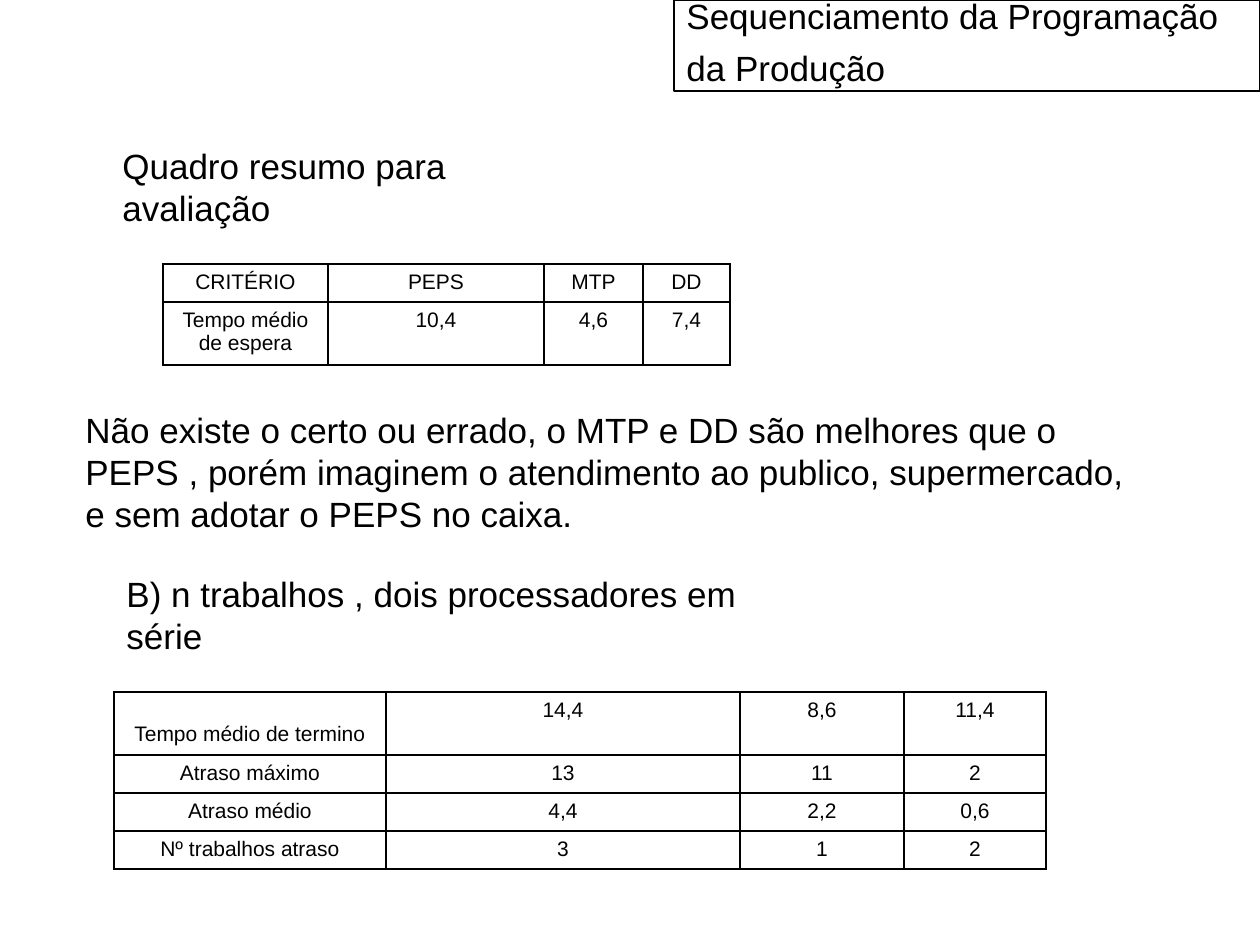
from lxml.etree import SubElement
from pptx import Presentation
from pptx.dml.color import RGBColor
from pptx.enum.shapes import MSO_SHAPE as SHAPE
from pptx.enum.text import MSO_ANCHOR as ANCHOR, PP_ALIGN as ALIGN
from pptx.oxml.ns import qn
from pptx.util import Pt

BLACK = RGBColor(0, 0, 0)
WHITE = RGBColor(255, 255, 255)
FONT = "Arial"

# Content: boxes are (left, top, width, height) in px
TITLE = "Sequenciamento da Programação da Produção"
TITLE_BOX = (674, 0, 586, 91)
TEXTS = [
    ("Quadro resumo para avaliação", (110, 138, 490, 97)),
    ("Não existe o certo ou errado, o MTP e DD são melhores que o PEPS , "
     "porém imaginem o atendimento ao publico, supermercado, "
     "e sem adotar o PEPS no caixa.", (73, 402, 1072, 139)),
    ("B) n trabalhos , dois processadores em série", (114, 572, 639, 84)),
]
WAITING = {
    "at": (163, 264),
    "cols": [165, 216, 99, 87],
    "heights": [38, 63],
    "rows": [("CRITÉRIO", "PEPS", "MTP", "DD"),
             ("Tempo médio de espera", "10,4", "4,6", "7,4")],
}
DELAYS = {
    "at": (114, 692),
    "cols": [272, 354, 164, 142],
    "heights": [63, 38, 38, 38],
    "rows": [("Tempo médio de termino", "14,4", "8,6", "11,4"),
             ("Atraso máximo", "13", "11", "2"),
             ("Atraso médio", "4,4", "2,2", "0,6"),
             ("Nº trabalhos atraso", "3", "1", "2")],
}


def px(n):
    return round(n * 914400 / 126)


def write(tf, text, size, align=ALIGN.LEFT):
    tf.word_wrap = True
    tf.text = text
    p = tf.paragraphs[0]
    p.alignment = align
    font = p.runs[0].font
    font.name, font.size = FONT, Pt(size)
    font.color.rgb = BLACK
    return p


def add_borders(cell):
    tcPr = cell._tc.get_or_add_tcPr()
    for i, side in enumerate(("lnL", "lnR", "lnT", "lnB")):
        ln = SubElement(tcPr, qn(f"a:{side}"), w=str(Pt(1)))
        fill = SubElement(ln, qn("a:solidFill"))
        SubElement(fill, qn("a:srgbClr"), val=str(BLACK))
        # Borders come before the fill in the cell properties
        tcPr.insert(i, ln)


def add_table(slide, data):
    rows, cols, heights = data["rows"], data["cols"], data["heights"]
    x, y = data["at"]
    table = slide.shapes.add_table(len(rows), len(cols), px(x), px(y),
                                   px(sum(cols)), px(sum(heights))).table
    table.first_row = table.horz_banding = False
    for col, width in zip(table.columns, cols):
        col.width = px(width)
    for row, height, texts in zip(table.rows, heights, rows):
        row.height = px(height)
        for cell, text in zip(row.cells, texts):
            write(cell.text_frame, text, 12, ALIGN.CENTER)
            cell.fill.background()
            add_borders(cell)
    return table


prs = Presentation()
prs.slide_width, prs.slide_height = px(1260), px(945)
slide = prs.slides.add_slide(prs.slide_layouts[6])

# Title box
sp = slide.shapes.add_shape(SHAPE.RECTANGLE, *map(px, TITLE_BOX))
sp.shadow.inherit = False
sp.fill.solid()
sp.fill.fore_color.rgb = WHITE
sp.line.color.rgb = BLACK
sp.line.width = Pt(0.75)
tf = sp.text_frame
tf.vertical_anchor = ANCHOR.MIDDLE
tf.margin_top, tf.margin_bottom = 0, px(18)
write(tf, TITLE, 20).line_spacing = Pt(30)

# Running text
for text, box in TEXTS:
    tf = slide.shapes.add_textbox(*map(px, box)).text_frame
    tf.vertical_anchor = ANCHOR.MIDDLE
    write(tf, text, 20)

# Tables; the first label of the second one sits a line lower
add_table(slide, WAITING)
add_table(slide, DELAYS).cell(0, 0).margin_top = px(30)

prs.save("out.pptx")
